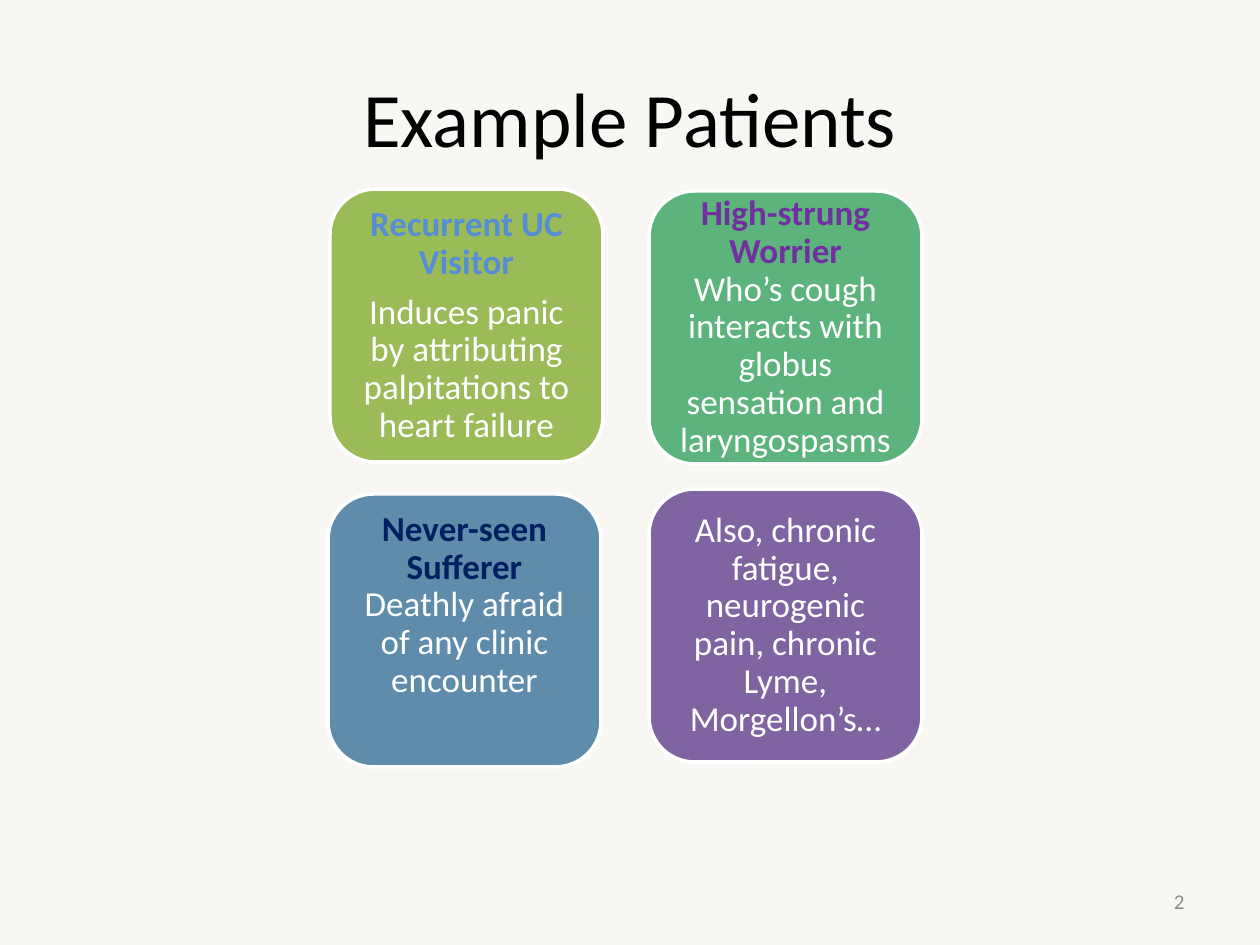
import dataclasses

import pptx
import pptx.dml.color
import pptx.enum.shapes
import pptx.enum.text
import pptx.util

EMU_PER_PX = 914400 / 126
ALIGN = pptx.enum.text.PP_ALIGN
MIDDLE = pptx.enum.text.MSO_ANCHOR.MIDDLE


@dataclasses.dataclass(frozen=True)
class Theme:
    font: str = "Calibri"
    title_size: int = 44
    card_size: int = 20
    number_size: int = 12
    background: str = "F8F7F3"
    title: str = "000000"
    light: str = "FFFFFF"
    number: str = "8C8C8C"


THEME = Theme()
CARD_SIDE = 273
CARD_INSET = 11
NEW_PARAGRAPH, NEW_LINE = "paragraph", "line"

# left, top, fill, heading, heading colour, what divides heading and body,
# body, extra room at the bottom
PATIENTS = [
    (330, 189, "9BBB59", "Recurrent UC Visitor", "558ED5", NEW_PARAGRAPH,
     "Induces panic by attributing palpitations to heart failure", 0),
    (649, 191, "5CB37C", "High-strung Worrier", "7030A0", NEW_LINE,
     "Who’s cough interacts with globus sensation and laryngospasms", 0),
    (328, 494, "608CAB", "Never-seen Sufferer", "002060", NEW_LINE,
     "Deathly afraid of any clinic encounter", 50),
    (649, 489, "8064A2", None, None, None,
     "Also, chronic fatigue, neurogenic pain, chronic Lyme, Morgellon’s…", 0),
]


def px(length):
    return pptx.util.Emu(round(length * EMU_PER_PX))


def rgb(code):
    return pptx.dml.color.RGBColor.from_string(code)


def format_paragraph(paragraph, size, align, colour=None):
    paragraph.alignment = align
    paragraph.font.name = THEME.font
    paragraph.font.size = pptx.util.Pt(size)
    if colour:
        paragraph.font.color.rgb = rgb(colour)


def add_run(paragraph, text, colour, bold=False):
    run = paragraph.add_run()
    run.text = text
    run.font.color.rgb = rgb(colour)
    run.font.bold = bold


def set_title(slide, text):
    title = slide.shapes.title
    title.left, title.top, title.width, title.height = map(px, (63, 38, 1134, 158))
    title.text_frame.text = text
    title.text_frame.vertical_anchor = MIDDLE
    format_paragraph(title.text_frame.paragraphs[0], THEME.title_size,
                     ALIGN.CENTER, THEME.title)


def add_card(slide, left, top, fill, heading, heading_colour, divider, body, extra):
    card = slide.shapes.add_shape(
        pptx.enum.shapes.MSO_SHAPE.ROUNDED_RECTANGLE,
        px(left), px(top), px(CARD_SIDE), px(CARD_SIDE))
    card.shadow.inherit = False
    card.fill.solid()
    card.fill.fore_color.rgb = rgb(fill)
    card.line.color.rgb = rgb(THEME.light)
    card.line.width = pptx.util.Pt(2)

    frame = card.text_frame
    frame.word_wrap = True
    frame.vertical_anchor = MIDDLE
    frame.margin_left = frame.margin_right = frame.margin_top = px(CARD_INSET)
    frame.margin_bottom = px(CARD_INSET + extra)

    # Heading, then body in the same paragraph or the next
    paragraph = frame.paragraphs[0]
    if heading:
        add_run(paragraph, heading, heading_colour, bold=True)
    if divider == NEW_LINE:
        paragraph.add_line_break()
    elif divider == NEW_PARAGRAPH:
        paragraph = frame.add_paragraph()
    add_run(paragraph, body, THEME.light)

    for paragraph in frame.paragraphs:
        format_paragraph(paragraph, THEME.card_size, ALIGN.CENTER)
        paragraph.line_spacing = 0.9
        paragraph.space_after = pptx.util.Pt(7)


def add_slide_number(slide, number):
    box = slide.shapes.add_textbox(px(903), px(876), px(294), px(50))
    box.text_frame.word_wrap = True
    box.text_frame.vertical_anchor = MIDDLE
    box.text_frame.text = number
    format_paragraph(box.text_frame.paragraphs[0], THEME.number_size,
                     ALIGN.RIGHT, THEME.number)


def main():
    deck = pptx.Presentation()
    deck.slide_width, deck.slide_height = px(1260), px(945)
    slide = deck.slides.add_slide(deck.slide_layouts.get_by_name("Title Only"))
    slide.background.fill.solid()
    slide.background.fill.fore_color.rgb = rgb(THEME.background)

    set_title(slide, "Example Patients")
    for patient in PATIENTS:
        add_card(slide, *patient)
    add_slide_number(slide, "2")

    deck.save("out.pptx")


if __name__ == "__main__":
    main()
